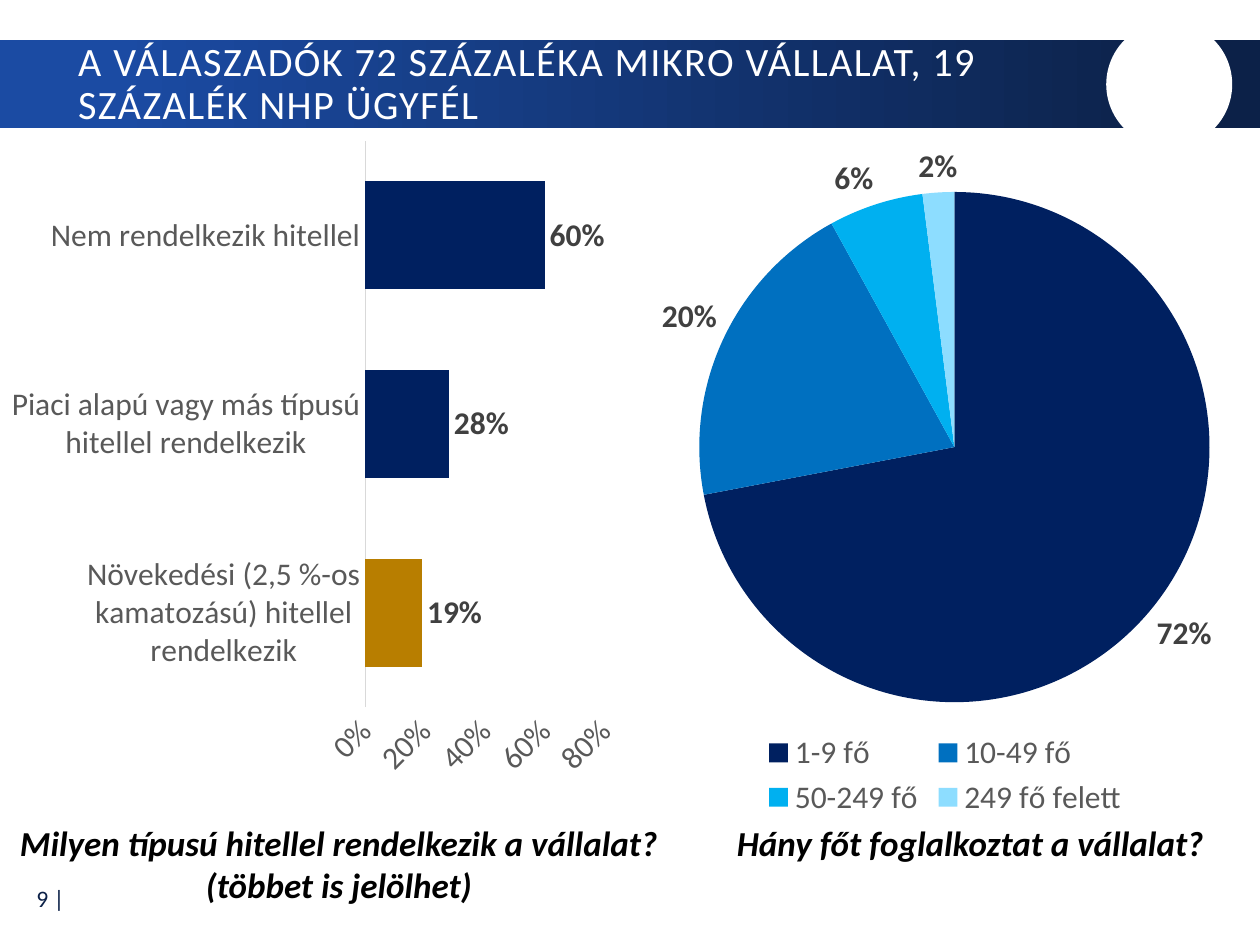
from dataclasses import dataclass
from typing import NamedTuple

from lxml.etree import SubElement
from pptx import Presentation
from pptx.chart.data import CategoryChartData
from pptx.dml.color import RGBColor as RGB
from pptx.enum.chart import (XL_CHART_TYPE as ChartType, XL_LABEL_POSITION as LabelPos,
                             XL_LEGEND_POSITION as LegendPos, XL_TICK_MARK as Tick)
from pptx.enum.shapes import MSO_SHAPE as Shape
from pptx.enum.text import MSO_ANCHOR as Anchor, MSO_AUTO_SIZE as AutoSize, PP_ALIGN as Align
from pptx.oxml.ns import qn
from pptx.util import Inches, Pt


@dataclass(frozen=True)
class Theme:
    font: str = "Calibri"
    white: str = "FFFFFF"
    black: str = "000000"
    band_start: str = "1B4BA3"
    band_end: str = "0C2148"
    navy: str = "002060"
    gold: str = "B87E00"
    pie: tuple = ("002060", "0070C0", "00B0F0", "8DDDFF")
    axis_text: str = "595959"
    axis_line: str = "D9D9D9"
    label: str = "404040"
    title_size: float = 23
    caption_size: float = 20
    chart_size: float = 18
    number_size: float = 13.5


class Box(NamedTuple):
    left: float
    top: float
    width: float
    height: float

    def emu(self) -> tuple:
        return tuple(Inches(v) for v in self)


class Caption(NamedTuple):
    text: str
    box: Box
    align: Align


class ChartSpec(NamedTuple):
    kind: ChartType
    box: Box
    plot: Box  # inner plot area, as fractions of the chart
    values: dict
    colors: tuple


T = Theme()

CAPTIONS = (
    Caption("Milyen típusú hitellel rendelkezik a vállalat? (többet is jelölhet)",
            Box(0.02, 6.47, 5.34, 0.77), Align.CENTER),
    Caption("Hány főt foglalkoztat a vállalat?", Box(5.75, 6.47, 4.25, 0.44), Align.LEFT),
)
LOANS = ChartSpec(
    ChartType.BAR_CLUSTERED, Box(0, 1.01, 5, 5.29), Box(0.58, 0.02, 0.38, 0.85),
    {"Növekedési (2,5 %-os kamatozású) hitellel rendelkezik": 0.19,
     "Piaci alapú vagy más típusú hitellel rendelkezik": 0.28,
     "Nem rendelkezik hitellel": 0.6},
    (T.gold, T.navy, T.navy))
HEADCOUNT = ChartSpec(
    ChartType.PIE, Box(5, 1.01, 5, 5.52), Box(0.11, 0.09, 0.81, 0.74),
    {"1-9 fő": 72, "10-49 fő": 20, "50-249 fő": 6, "249 fő felett": 2}, T.pie)


def style_font(font, size: float, color: str, bold: bool = False, italic: bool = False) -> None:
    font.name, font.size = T.font, Pt(size)
    font.bold, font.italic = bold, italic
    font.color.rgb = RGB.from_string(color)


def write(sp, text: str, *, size: float, color: str = T.black, bold: bool = False,
          italic: bool = False, align: Align = Align.LEFT, anchor: Anchor = Anchor.TOP,
          line_spacing: float = 1.0, tracking: float = 0) -> None:
    tf = sp.text_frame
    tf.word_wrap, tf.auto_size, tf.vertical_anchor = True, AutoSize.NONE, anchor
    p = tf.paragraphs[0]
    p.alignment, p.line_spacing = align, line_spacing
    r = p.add_run()
    r.text = text
    style_font(r.font, size, color, bold, italic)
    if tracking:
        r.font._element.set("spc", str(round(tracking * 100)))


def add_plain_shape(s, kind: Shape, box: Box):
    sp = s.shapes.add_shape(kind, *box.emu())
    sp.shadow.inherit = False
    sp.line.fill.background()
    return sp


def add_header(s) -> None:
    band = add_plain_shape(s, Shape.RECTANGLE, Box(0, 0.32, 10, 0.7))
    band.fill.gradient()
    band.fill.gradient_angle = 0
    for stop, position, color in zip(band.fill.gradient_stops, (0.09, 0.95),
                                     (T.band_start, T.band_end)):
        stop.position = position
        stop.color.rgb = RGB.from_string(color)

    circle = add_plain_shape(s, Shape.OVAL, Box(8.78, 0.17, 1, 1))
    circle.fill.solid()
    circle.fill.fore_color.rgb = RGB.from_string(T.white)

    title = s.shapes.title
    title.element.getparent().append(title.element)  # in front of the band
    title.left, title.top, title.width, title.height = Box(0.52, 0.34, 8.32, 0.67).emu()
    write(title, "A VÁLASZADÓK 72 SZÁZALÉKA MIKRO VÁLLALAT, 19 SZÁZALÉK NHP ÜGYFÉL",
          size=T.title_size, color=T.white, anchor=Anchor.MIDDLE,
          line_spacing=0.9, tracking=0.8)


def place_plot(chart, plot: Box) -> None:
    """Fix the inner plot area, which python-pptx leaves automatic."""
    area = chart._chartSpace.chart.plotArea
    for old in area.findall(qn("c:layout")):
        area.remove(old)
    layout = SubElement(area, qn("c:layout"))
    area.insert(0, layout)
    manual = SubElement(layout, qn("c:manualLayout"))
    settings = [("layoutTarget", "inner"), ("xMode", "edge"), ("yMode", "edge"),
                *zip("xywh", plot)]
    for tag, value in settings:
        SubElement(manual, qn(f"c:{tag}")).set("val", str(value))


def add_chart(s, spec: ChartSpec):
    data = CategoryChartData()
    data.categories = list(spec.values)
    data.add_series("Series 1", list(spec.values.values()))
    chart = s.shapes.add_chart(spec.kind, *spec.box.emu(), data).chart
    chart.has_title = chart.has_legend = False
    style_font(chart.font, T.chart_size, T.black)
    place_plot(chart, spec.plot)

    series = chart.plots[0].series[0]
    for i, color in enumerate(spec.colors):
        fill = series.points[i].format.fill
        fill.solid()
        fill.fore_color.rgb = RGB.from_string(color)

    labels = series.data_labels
    style_font(labels.font, T.chart_size, T.label, bold=True)
    labels.number_format, labels.number_format_is_linked = "0%", False
    labels.position = LabelPos.OUTSIDE_END
    is_pie = spec.kind == ChartType.PIE
    labels.show_percentage, labels.show_value = is_pie, not is_pie
    return chart


def add_loan_chart(s) -> None:
    chart = add_chart(s, LOANS)
    plot = chart.plots[0]
    plot.gap_width, plot.vary_by_categories = 75, False
    for axis in (chart.category_axis, chart.value_axis):
        axis.major_tick_mark = axis.minor_tick_mark = Tick.NONE
        axis.has_major_gridlines = False
        style_font(axis.tick_labels.font, T.chart_size, T.axis_text)
    line = chart.category_axis.format.line
    line.color.rgb, line.width = RGB.from_string(T.axis_line), Pt(0.75)

    values = chart.value_axis
    values.format.line.fill.background()
    values.minimum_scale, values.maximum_scale, values.major_unit = 0, 0.8, 0.2
    values.tick_labels.number_format = "0%"
    values.tick_labels.number_format_is_linked = False
    body = values._element.find(qn("c:txPr")).find(qn("a:bodyPr"))
    body.set("rot", "-2700000")  # labels slant upwards by 45 degrees


def add_headcount_chart(s) -> None:
    chart = add_chart(s, HEADCOUNT)
    chart.plots[0].vary_by_categories = True
    chart.has_legend = True
    chart.legend.position, chart.legend.include_in_layout = LegendPos.BOTTOM, False
    style_font(chart.legend.font, T.chart_size, T.axis_text)


def main() -> None:
    prs = Presentation()
    prs.slide_width, prs.slide_height = Inches(10), Inches(7.5)
    s = prs.slides.add_slide(prs.slide_layouts[5])
    number = s.shapes.add_textbox(*Box(0.01, 6.94, 0.6, 0.37).emu())
    write(number, "9 |", size=T.number_size, color=T.band_end,
          align=Align.RIGHT, anchor=Anchor.MIDDLE)
    add_header(s)
    add_loan_chart(s)
    add_headcount_chart(s)
    for caption in CAPTIONS:
        write(s.shapes.add_textbox(*caption.box.emu()), caption.text,
              size=T.caption_size, bold=True, italic=True, align=caption.align)
    prs.save("out.pptx")


if __name__ == "__main__":
    main()
